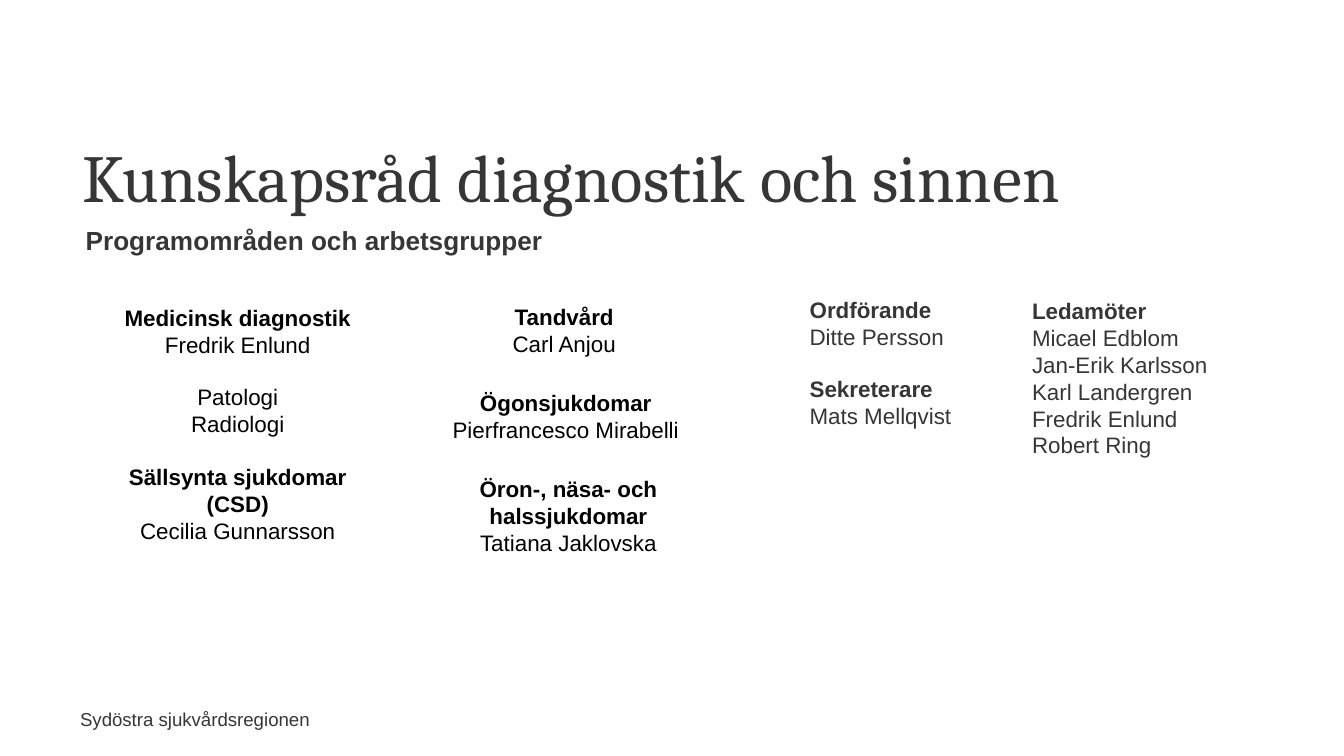
from dataclasses import dataclass
from typing import NamedTuple

from lxml import etree
from pptx import Presentation, util as u
from pptx.dml.color import RGBColor
from pptx.enum import shapes, text
from pptx.oxml import ns


@dataclass(frozen=True)
class Theme:
    heading_font: str = "Cambria"
    body_font: str = "Arial"
    grey: RGBColor = RGBColor(0x36, 0x36, 0x36)
    black: RGBColor = RGBColor(0, 0, 0)
    white: RGBColor = RGBColor(255, 255, 255)
    title_size: int = 36
    subtitle_size: int = 14
    body_size: int = 12
    footer_size: int = 10
    group_gap: float = 13.8


class Area(NamedTuple):
    """Left, top, width and height in centimetres."""
    left: float
    top: float
    width: float
    height: float


class Group(NamedTuple):
    heading: str
    names: tuple[str, ...]


class Card(NamedTuple):
    area: Area
    groups: tuple[Group, ...]
    color: RGBColor
    align: text.PP_ALIGN = text.PP_ALIGN.CENTER
    anchor: text.MSO_ANCHOR = text.MSO_ANCHOR.MIDDLE


THEME = Theme()
CENTER, LEFT, RIGHT = text.PP_ALIGN.CENTER, text.PP_ALIGN.LEFT, text.PP_ALIGN.RIGHT
TOP, MIDDLE = text.MSO_ANCHOR.TOP, text.MSO_ANCHOR.MIDDLE

CARDS = (
    Card(Area(7.67, 5.49, 5.99, 1.5), (Group("Tandvård", ("Carl Anjou",)),), THEME.black),
    Card(Area(7.7, 7.11, 5.99, 1.5),
         (Group("Ögonsjukdomar", ("Pierfrancesco Mirabelli",)),), THEME.black),
    Card(Area(7.75, 8.74, 5.99, 2.01),
         (Group("Öron-, näsa- och halssjukdomar", ("Tatiana Jaklovska",)),), THEME.black),
    Card(Area(1.5, 5.33, 5.99, 6.25),
         (Group("Medicinsk diagnostik", ("Fredrik Enlund",)),
          Group("", ("Patologi", "Radiologi")),
          Group("Sällsynta sjukdomar (CSD)", ("Cecilia Gunnarsson",))),
         THEME.black, anchor=TOP),
    Card(Area(14.71, 5.13, 8, 7.01),
         (Group("Ordförande", ("Ditte Persson",)),
          Group("Sekreterare", ("Mats Mellqvist",))),
         THEME.grey, LEFT, TOP),
)
MEMBERS = Group("Ledamöter", ("Micael Edblom", "Jan-Erik Karlsson", "Karl Landergren",
                              "Fredrik Enlund", "Robert Ring"))


def place(shape, area: Area) -> None:
    shape.left, shape.top, shape.width, shape.height = (u.Cm(length) for length in area)


def add_span(para, words: str, size: int, color: RGBColor, bold: bool = False,
             font: str = THEME.body_font) -> None:
    span = para.add_run()
    span.text = words
    span.font.name = font
    span.font.size = u.Pt(size)
    span.font.bold = bold
    span.font.color.rgb = color


def clear_bullet(para) -> None:
    properties = para._p.get_or_add_pPr()
    properties.set("marL", "0")
    properties.set("indent", "0")
    etree.SubElement(properties, ns.qn("a:buNone"))


def write_groups(frame, groups: tuple[Group, ...], color: RGBColor,
                 align: text.PP_ALIGN, bulleted: bool = False) -> None:
    """Write bold headings over names, with one line of space between groups."""
    para = frame.paragraphs[0]
    for group_index, group in enumerate(groups):
        lines = [(group.heading, True)] if group.heading else []
        lines += [(name, False) for name in group.names]
        for line_index, (words, bold) in enumerate(lines):
            if group_index or line_index:
                para = frame.add_paragraph()
            para.alignment = align
            starts_group = group_index > 0 and line_index == 0
            para.space_before = u.Pt(THEME.group_gap if starts_group else 0)
            if bulleted:
                clear_bullet(para)
            add_span(para, words, THEME.body_size, color, bold)


def add_card(page, card: Card) -> None:
    box = page.shapes.add_shape(shapes.MSO_SHAPE.ROUNDED_RECTANGLE,
                                *(u.Cm(length) for length in card.area))
    box.shadow.inherit = False
    box.fill.solid()
    box.fill.fore_color.rgb = THEME.white
    box.line.fill.background()
    box.text_frame.word_wrap = True
    box.text_frame.vertical_anchor = card.anchor
    write_groups(box.text_frame, card.groups, card.color, card.align)


def add_label(page, area: Area, words: str, size: int, bold: bool = False,
              align: text.PP_ALIGN = LEFT, wrap: bool = True) -> None:
    box = page.shapes.add_textbox(*(u.Cm(length) for length in area))
    box.text_frame.word_wrap = wrap
    para = box.text_frame.paragraphs[0]
    para.alignment = align
    add_span(para, words, size, THEME.grey, bold)


def fill_title(page) -> None:
    title = page.shapes.title
    place(title, Area(1.3, 2.13, 22.86, 2.39))
    title.text_frame.vertical_anchor = MIDDLE
    title.text_frame.auto_size = text.MSO_AUTO_SIZE.NONE
    para = title.text_frame.paragraphs[0]
    para.alignment = LEFT
    add_span(para, "Kunskapsråd diagnostik och sinnen", THEME.title_size, THEME.grey,
             font=THEME.heading_font)


def fill_members(page) -> None:
    body = page.placeholders[1]
    place(body, Area(19.25, 5.49, 3.86, 3.84))
    body.text_frame.word_wrap = False
    body.text_frame.auto_size = text.MSO_AUTO_SIZE.NONE
    write_groups(body.text_frame, (MEMBERS,), THEME.grey, LEFT, bulleted=True)
    page.shapes._spTree.append(body._element)  # in front of the cards


def main() -> None:
    deck = Presentation()
    deck.slide_width, deck.slide_height = u.Cm(25.4), u.Cm(14.29)
    page = deck.slides.add_slide(deck.slide_layouts[1])
    add_label(page, Area(1.22, 13.26, 4.88, 0.69), "Sydöstra sjukvårdsregionen",
              THEME.footer_size, align=RIGHT, wrap=False)
    fill_title(page)
    for card in CARDS:
        add_card(page, card)
    add_label(page, Area(1.37, 4.11, 13.59, 0.86), "Programområden och arbetsgrupper",
              THEME.subtitle_size, bold=True)
    fill_members(page)
    deck.save("out.pptx")


if __name__ == "__main__":
    main()
